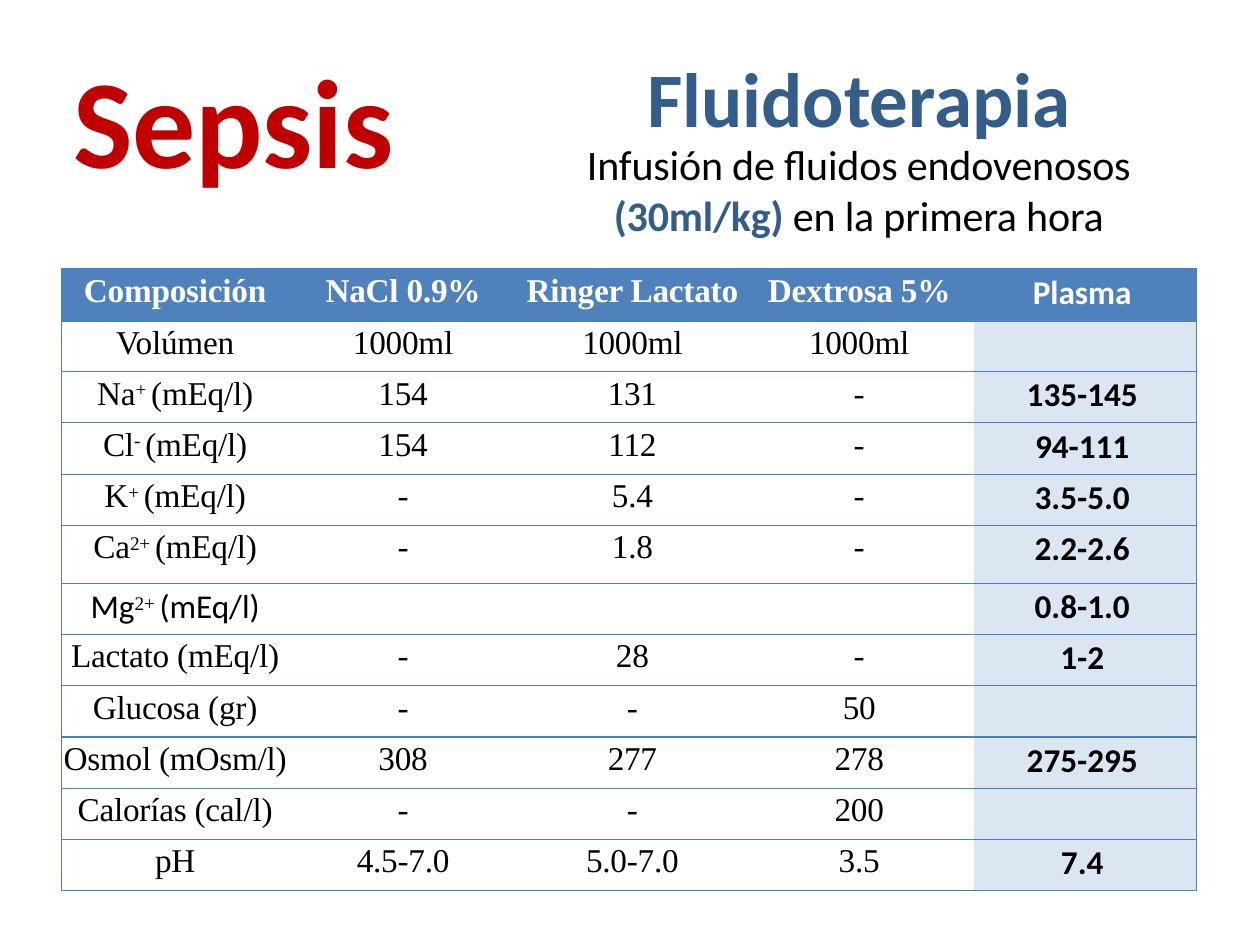
from lxml.etree import SubElement
from pptx import Presentation
from pptx.dml.color import RGBColor
from pptx.enum.text import MSO_AUTO_SIZE as FIT, PP_ALIGN as ALIGN
from pptx.oxml.ns import qn
from pptx.util import Inches, Pt

THEME = {
    "red": "C00000", "blue": "355D8A", "black": "000000", "white": "FFFFFF",
    "header": "4F81BD", "line": "4B7EBC", "plasma": "DCE6F2",
    "sans": "Calibri", "serif": "Times New Roman",
    "hero": 72, "title": 44, "body": 24, "cell": 19,
}
NO_STYLE = "{2D5ABB26-0587-4C30-8999-92F81FD0307C}"

TEXTS = [
    {"at": (4.35, 0.39, 4.94, 0.76), "margins": (0, 0.01, 0, 0), "size": "title",
     "before": 1.1, "lines": [[("Fluidoterapia", "blue", True)]]},
    {"at": (0.16, 0.29, 3.39, 1.31), "margins": (0.1, 0.05, 0.1, 0.05), "size": "hero",
     "before": 0, "lines": [[("Sepsis", "red", True)]]},
    {"at": (4.62, 1.09, 4.39, 0.82), "margins": (0, 0.01, 0, 0), "size": "body",
     "before": 1, "spacing": -10, "lines": [
         [("Infusión de fluidos endovenosos", "black", False)],
         [("(30ml/kg) ", "blue", True), ("en la primera hora", "black", False)]]},
]
HEADER = ["Composición", "NaCl 0.9%", "Ringer Lactato", "Dextrosa 5%", "Plasma"]
ROWS = [
    ["Volúmen", "1000ml", "1000ml", "1000ml", ""],
    [("Na", "+ ", "(mEq/l)"), "154", "131", "-", "135-145"],
    [("Cl", "- ", "(mEq/l)"), "154", "112", "-", "94-111"],
    [("K", "+ ", "(mEq/l)"), "-", "5.4", "-", "3.5-5.0"],
    [("Ca", "2+ ", "(mEq/l)"), "-", "1.8", "-", "2.2-2.6"],
    [("Mg", "2+ ", "(mEq/l)"), "", "", "", "0.8-1.0"],
    ["Lactato (mEq/l)", "-", "28", "-", "1-2"],
    ["Glucosa (gr)", "-", "-", "50", ""],
    ["Osmol (mOsm/l)", "308", "277", "278", "275-295"],
    ["Calorías (cal/l)", "-", "-", "200", ""],
    ["pH", "4.5-7.0", "5.0-7.0", "3.5", "7.4"],
]
TABLE_AT = (0.49, 2.13, 9, 4.92)
COL_WIDTHS = [1.94, 1.59, 1.94, 1.77, 1.77]
LEFT_GAPS = [0, 0, 0.06, 0, 0]
RIGHT_GAPS = [0.14, 0.05, 0, 0.05, 0.05]
ROW_HEIGHT, SPECIAL_HEIGHTS = 0.407, {0: 0.42, 1: 0.4, 5: 0.46}
SIDES = ("left", "top", "right", "bottom")


def set_margins(target, margins):
    """Set the four inner margins of a text frame or cell."""
    for side, value in zip(SIDES, margins):
        setattr(target, f"margin_{side}", Inches(value))


def add_run(p, text, color, spacing=0, raised=False, **values):
    """Append a formatted run to a paragraph."""
    r = p.add_run()
    r.text = text
    for name, value in values.items():
        setattr(r.font, name, value)
    r.font.color.rgb = RGBColor.from_string(THEME[color])
    props = r._r.get_or_add_rPr()
    if spacing:
        props.set("spc", str(spacing))
    if raised:
        props.set("baseline", "25000")


def add_text(slide, item):
    """Add one centred text box."""
    tf = slide.shapes.add_textbox(*map(Inches, item["at"])).text_frame
    tf.word_wrap, tf.auto_size = True, FIT.SHAPE_TO_FIT_TEXT
    set_margins(tf, item["margins"])
    for i, line in enumerate(item["lines"]):
        p = tf.add_paragraph() if i else tf.paragraphs[0]
        p.alignment = ALIGN.CENTER
        p.space_before = Pt(0.1 if i else item["before"])
        for text, color, bold in line:
            add_run(p, text, color, item.get("spacing", 0), bold=bold,
                    size=Pt(THEME[item["size"]]), name=THEME["sans"])


def add_borders(cell, edges):
    """Draw the given edges of a cell and clear the rest."""
    props = cell._tc.get_or_add_tcPr()
    for edge in "LRTB":
        ln = SubElement(props, qn(f"a:ln{edge}"), w=str(Pt(0.75)))
        if edge in edges:
            fill = SubElement(ln, qn("a:solidFill"))
            SubElement(fill, qn("a:srgbClr"), val=THEME["line"])
        else:
            SubElement(ln, qn("a:noFill"))


def fill_cell(cell, value, row, col):
    """Format a cell by its place and write its value."""
    head, plasma = row == 0, col == len(HEADER) - 1
    add_borders(cell, "TB" + ("L" if col == 0 else "R" if plasma else ""))
    if head or plasma:
        cell.fill.solid()
        cell.fill.fore_color.rgb = RGBColor.from_string(THEME["header" if head else "plasma"])
    else:
        cell.fill.background()
    set_margins(cell, (LEFT_GAPS[col], 0.04 if head else 0.03, RIGHT_GAPS[col], 0))
    p = cell.text_frame.paragraphs[0]
    p.alignment = ALIGN.CENTER
    p.space_before = Pt({0: 2.9, 1: 1.9}.get(row, 2.5))
    parts = value if isinstance(value, tuple) else (value,)
    for i, text in enumerate(parts):
        if text:
            sans = plasma or (parts[0] == "Mg" and i != 1)
            add_run(p, text, "white" if head else "black", 0 if sans else -10,
                    raised=i == 1, bold=head or plasma, size=Pt(THEME["cell"]),
                    name=THEME["sans" if sans else "serif"])


def add_composition(slide):
    """Add the table of fluid compositions."""
    data = [HEADER] + ROWS
    frame = slide.shapes.add_table(len(data), len(HEADER), *map(Inches, TABLE_AT))
    table = frame.table
    table._tbl.tblPr.find(qn("a:tableStyleId")).text = NO_STYLE
    table.horz_banding = False
    for column, width in zip(table.columns, COL_WIDTHS):
        column.width = Inches(width)
    for i, values in enumerate(data):
        table.rows[i].height = Inches(SPECIAL_HEIGHTS.get(i, ROW_HEIGHT))
        for j, value in enumerate(values):
            fill_cell(table.cell(i, j), value, i, j)


def main():
    """Build and save the slide."""
    prs = Presentation()
    prs.slide_width, prs.slide_height = Inches(10), Inches(7.5)
    s = prs.slides.add_slide(prs.slide_layouts[6])
    for item in TEXTS[:2]:
        add_text(s, item)
    add_composition(s)
    add_text(s, TEXTS[2])
    prs.save("out.pptx")


if __name__ == "__main__":
    main()
